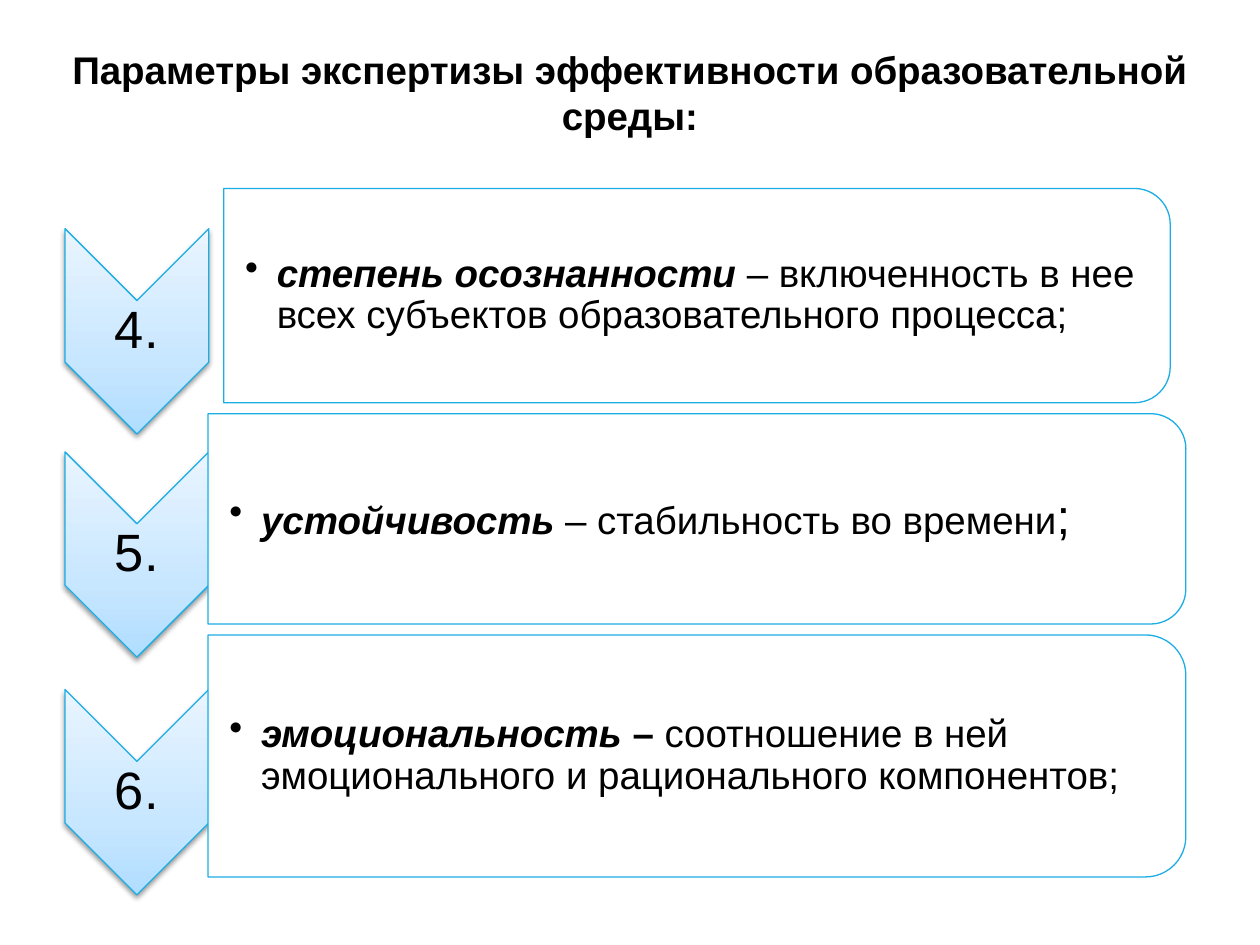
import lxml.etree
import pptx
import pptx.dml.color
import pptx.enum.shapes
import pptx.enum.text
import pptx.oxml
import pptx.oxml.ns
import pptx.util
from pptx.util import Cm

BLACK = pptx.dml.color.RGBColor(0x00, 0x00, 0x00)
WHITE = pptx.dml.color.RGBColor(0xFF, 0xFF, 0xFF)
BLUE = pptx.dml.color.RGBColor(0x1C, 0xAD, 0xE4)
GRADIENT = (
    (0, pptx.dml.color.RGBColor(0xB0, 0xDD, 0xFF)),
    (35, pptx.dml.color.RGBColor(0xC7, 0xE6, 0xFF)),
    (100, pptx.dml.color.RGBColor(0xEA, 0xF5, 0xFF)),
)
NAMESPACE = pptx.oxml.ns.nsdecls("a")
SHAPES = pptx.enum.shapes.MSO_SHAPE
ANCHOR = pptx.enum.text.MSO_ANCHOR
ALIGN = pptx.enum.text.PP_ALIGN

CHEVRON_LENGTH, CHEVRON_WIDTH = 4.14, 2.9
CHEVRON_CENTER = 2.76
PANEL_CENTER = 14.05

# number, chevron centre, panel centre, panel width and height (cm), runs: text, size, bold, italic
ROWS = (
    ("4.", 6.68, 5.96, 19.08, 4.32, (
        ("степень осознанности ", 22, True, True),
        ("– включенность в нее всех субъектов образовательного процесса;", 22, False, False))),
    ("5.", 11.18, 10.46, 19.71, 4.24, (
        ("устойчивость ", 22, True, True),
        ("– стабильность во времени", 22, False, False),
        (";", 28, False, False))),
    ("6.", 15.97, 15.24, 19.71, 4.88, (
        ("эмоциональность", 22, True, True),
        (" –", 22, True, False),
        (" соотношение в ней эмоционального и рационального компонентов;", 22, False, False))),
)

presentation = pptx.Presentation()
presentation.slide_width, presentation.slide_height = Cm(25.4), Cm(19.05)
slide = presentation.slides.add_slide(presentation.slide_layouts[6])


def add_text(left, top, width, height, runs, anchor, margins):
    """Add a wrapped one-paragraph text box and return its paragraph."""
    frame = slide.shapes.add_textbox(Cm(left), Cm(top), Cm(width), Cm(height)).text_frame
    frame.word_wrap = True
    frame.vertical_anchor = anchor
    frame.margin_left, frame.margin_top, frame.margin_right, frame.margin_bottom = map(Cm, margins)
    paragraph = frame.paragraphs[0]
    for text, size, bold, italic in runs:
        run = paragraph.add_run()
        run.text = text
        run.font.name = "Arial"
        run.font.size = pptx.util.Pt(size)
        run.font.bold, run.font.italic = bold, italic
        run.font.color.rgb = BLACK
    return paragraph


def add_turned_shape(kind, center_x, center_y, width, height):
    """Add a blue-edged shape turned by 90 degrees; the size is the one before turning."""
    shape = slide.shapes.add_shape(
        kind, Cm(center_x - width / 2), Cm(center_y - height / 2), Cm(width), Cm(height))
    shape.rotation = 90
    shape.shadow.inherit = False
    shape.line.color.rgb = BLUE
    shape.line.width = pptx.util.Pt(0.75)
    return shape


title = add_text(
    0.79, 0.79, 23.82, 2.54,
    [("Параметры экспертизы эффективности образовательной среды:", 22, True, False)],
    ANCHOR.TOP, (0.25, 0.13, 0.25, 0.13))
title.alignment = ALIGN.CENTER
title.space_before = pptx.util.Pt(4.4)

stops = "".join(
    f'<a:gs pos="{position * 1000}"><a:srgbClr val="{color}"/></a:gs>' for position, color in GRADIENT)

for number, chevron_y, panel_y, panel_width, panel_height, runs in ROWS:
    chevron = add_turned_shape(
        SHAPES.CHEVRON, CHEVRON_CENTER, chevron_y, CHEVRON_LENGTH, CHEVRON_WIDTH)
    chevron.fill.background()
    properties = chevron.element.spPr
    properties.replace(
        properties.find(pptx.oxml.ns.qn("a:noFill")),
        pptx.oxml.parse_xml(
            f'<a:gradFill {NAMESPACE} rotWithShape="0"><a:gsLst>{stops}</a:gsLst>'
            '<a:lin ang="16200000" scaled="0"/></a:gradFill>'))
    properties.find(pptx.oxml.ns.qn("a:effectLst")).append(pptx.oxml.parse_xml(
        f'<a:outerShdw {NAMESPACE} blurRad="39370" dist="20320" dir="5400000" rotWithShape="0">'
        '<a:srgbClr val="000000"><a:alpha val="38000"/></a:srgbClr></a:outerShdw>'))

    label = add_text(
        CHEVRON_CENTER - CHEVRON_WIDTH / 2, chevron_y - 0.62, CHEVRON_WIDTH, 1.24,
        [(number, 30, False, False)], ANCHOR.MIDDLE, (0.05, 0.05, 0.05, 0.05))
    label.alignment = ALIGN.CENTER
    label.line_spacing = 0.9
    label.space_after = pptx.util.Pt(10.5)

    panel = add_turned_shape(
        SHAPES.ROUND_2_SAME_RECTANGLE, PANEL_CENTER, panel_y, panel_height, panel_width)
    panel.fill.solid()
    panel.fill.fore_color.rgb = WHITE
    color = panel.element.spPr.find(pptx.oxml.ns.qn("a:solidFill"))[0]
    lxml.etree.SubElement(color, pptx.oxml.ns.qn("a:alpha"), val="90000")

    text_height = 0.9 * panel_height
    item = add_text(
        PANEL_CENTER - panel_width / 2, panel_y - text_height / 2, panel_width - 0.21, text_height,
        runs, ANCHOR.MIDDLE, (0.43, 0.05, 0.05, 0.05))
    item.level = 1
    item.line_spacing = 0.9
    item.space_after = pptx.util.Pt(3.3)
    item_properties = item._p.get_or_add_pPr()
    item_properties.set("marL", str(Cm(0.64)))
    item_properties.set("indent", str(Cm(-0.64)))
    lxml.etree.SubElement(item_properties, pptx.oxml.ns.qn("a:buChar"), char="•")

presentation.save("out.pptx")
